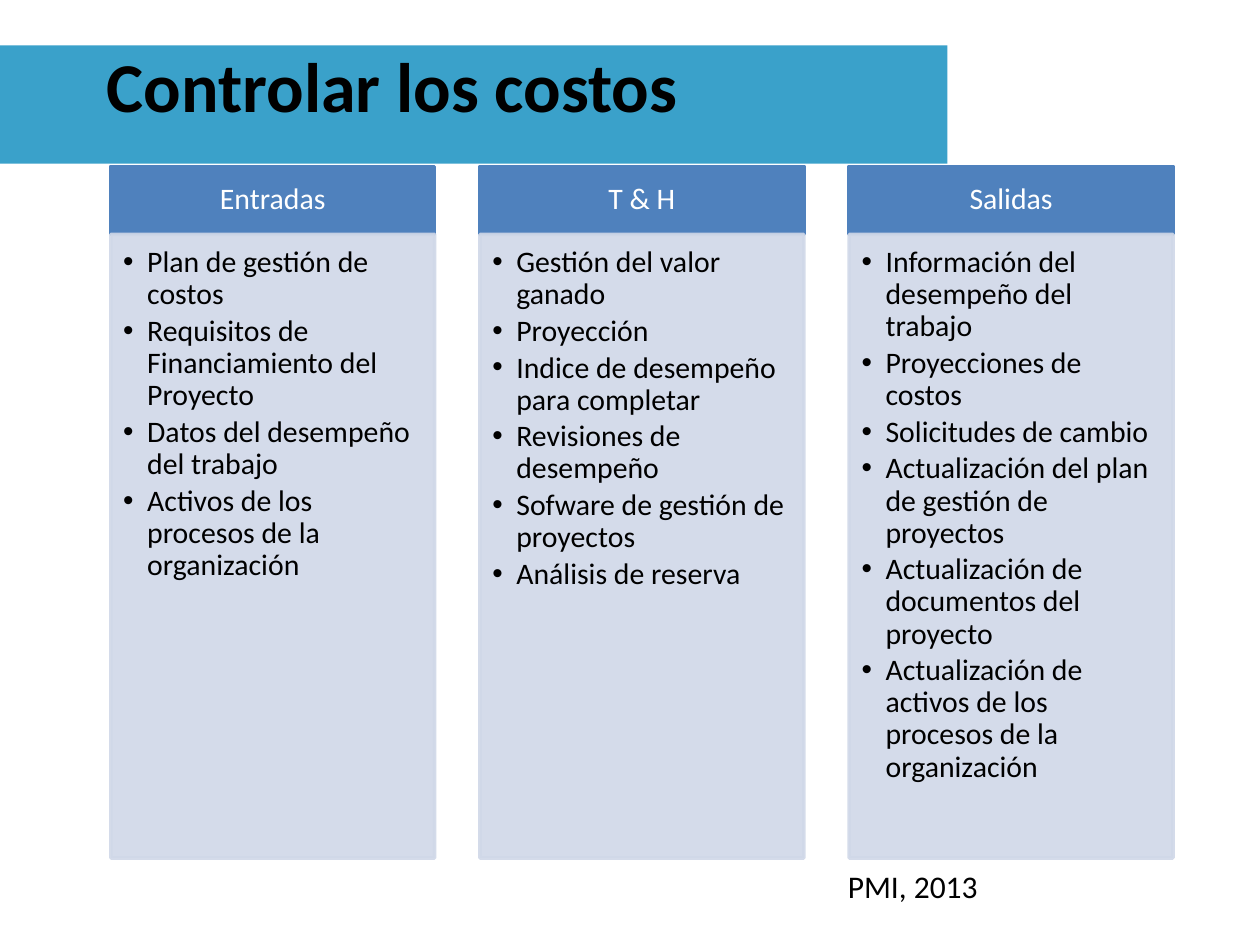
from lxml import etree
from pptx import Presentation
from pptx.dml.color import RGBColor
from pptx.enum.shapes import MSO_SHAPE
from pptx.enum.text import MSO_ANCHOR, PP_ALIGN
from pptx.oxml.ns import qn
from pptx.util import Inches, Pt

RECT = MSO_SHAPE.RECTANGLE
TOP, MIDDLE = MSO_ANCHOR.TOP, MSO_ANCHOR.MIDDLE
LEFT, CENTER = PP_ALIGN.LEFT, PP_ALIGN.CENTER

THEME = {
    "font": "Calibri",
    "band": "3AA1CA", "head": "4F81BD", "body": "D0D8E8",
    "ink": "000000", "light": "FFFFFF",
    "title": 40, "text": 17, "note": 18,
}
GRID = {"left": 0.88, "step": 2.93, "wide": 2.57}
HEAD = {"top": 1.32, "high": 0.54}
BODY = {"top": 1.86, "high": 4.95}

COLUMNS = [
    ("Entradas", [
        "Plan de gestión de costos",
        "Requisitos de Financiamiento del Proyecto",
        "Datos del desempeño del trabajo",
        "Activos de los procesos de la organización",
    ]),
    ("T & H", [
        "Gestión del valor ganado",
        "Proyección",
        "Indice de desempeño para completar",
        "Revisiones de desempeño",
        "Sofware de gestión de proyectos",
        "Análisis de reserva",
    ]),
    ("Salidas", [
        "Información del desempeño del trabajo",
        "Proyecciones de costos",
        "Solicitudes de cambio",
        "Actualización del plan de gestión de proyectos",
        "Actualización de documentos del proyecto",
        "Actualización de activos de los procesos de la organización",
    ]),
]


def apply(target, values):
    for name, value in values.items():
        setattr(target, name, value)


def color(key):
    return RGBColor.from_string(THEME[key])


def fade(fill, share):
    tint = fill._xPr.find(qn("a:solidFill"))[0]
    etree.SubElement(tint, qn("a:alpha"), val=str(share * 1000))


def add_box(slide, area, fill, edge=0, alpha=100):
    box = slide.shapes.add_shape(RECT, *map(Inches, area))
    box.shadow.inherit = False
    paints = [box.fill]
    if edge:
        box.line.width = Pt(edge)
        paints.append(box.line.fill)
    else:
        box.line.fill.background()
    for paint in paints:
        paint.solid()
        paint.fore_color.rgb = color(fill)
        if alpha < 100:
            fade(paint, alpha)
    return box


def add_label(slide, area):
    return slide.shapes.add_textbox(*map(Inches, area))


def add_bullet(para):
    props = para._p.get_or_add_pPr()
    props.set("marL", str(Inches(0.19)))
    props.set("indent", str(-Inches(0.19)))
    etree.SubElement(props, qn("a:buFont"), typeface="Arial")
    etree.SubElement(props, qn("a:buChar"), char="•")


def write(shape, lines, size, ink="ink", bold=False, align=LEFT,
          anchor=TOP, inset=(0.1, 0.05, 0.1, 0.05), space=None, bullet=False):
    frame = shape.text_frame
    sides = ("margin_left", "margin_top", "margin_right", "margin_bottom")
    apply(frame, {"word_wrap": True, "vertical_anchor": anchor})
    apply(frame, dict(zip(sides, map(Inches, inset))))
    for row, line in enumerate(lines):
        para = frame.paragraphs[0] if row == 0 else frame.add_paragraph()
        if bullet:
            add_bullet(para)
        run = para.add_run()
        run.text = line
        apply(para, {"alignment": align, **(space or {})})
        apply(run.font, {"name": THEME["font"], "size": Pt(THEME[size]),
                         "bold": bold})
        run.font.color.rgb = color(ink)


def add_column(slide, index, head, items):
    left = GRID["left"] + index * GRID["step"]
    top, body = [(left, part["top"], GRID["wide"], part["high"])
                 for part in (HEAD, BODY)]
    write(add_box(slide, top, "head", edge=2), [head], "text", ink="light",
          align=CENTER, anchor=MIDDLE, inset=(0.13, 0.08, 0.13, 0.08),
          space={"line_spacing": 0.9})
    write(add_box(slide, body, "body", edge=2, alpha=90), items, "text",
          inset=(0.1, 0.1, 0.13, 0.15), bullet=True,
          space={"line_spacing": 0.9, "space_after": Pt(2.55)})


def main():
    deck = Presentation()
    apply(deck, {"slide_width": Inches(10), "slide_height": Inches(7.5)})
    slide = deck.slides.add_slide(deck.slide_layouts[6])
    add_box(slide, (0, 0.36, 7.52, 0.94), "band")
    write(add_label(slide, (0.75, 0.29, 9, 1.25)),
          ["Controlar los costos"], "title", bold=True)
    for index, (head, items) in enumerate(COLUMNS):
        add_column(slide, index, head, items)
    write(add_label(slide, (5.33, 6.83, 3.83, 0.4)),
          ["PMI, 2013"], "note", align=CENTER)
    deck.save("out.pptx")


if __name__ == "__main__":
    main()
